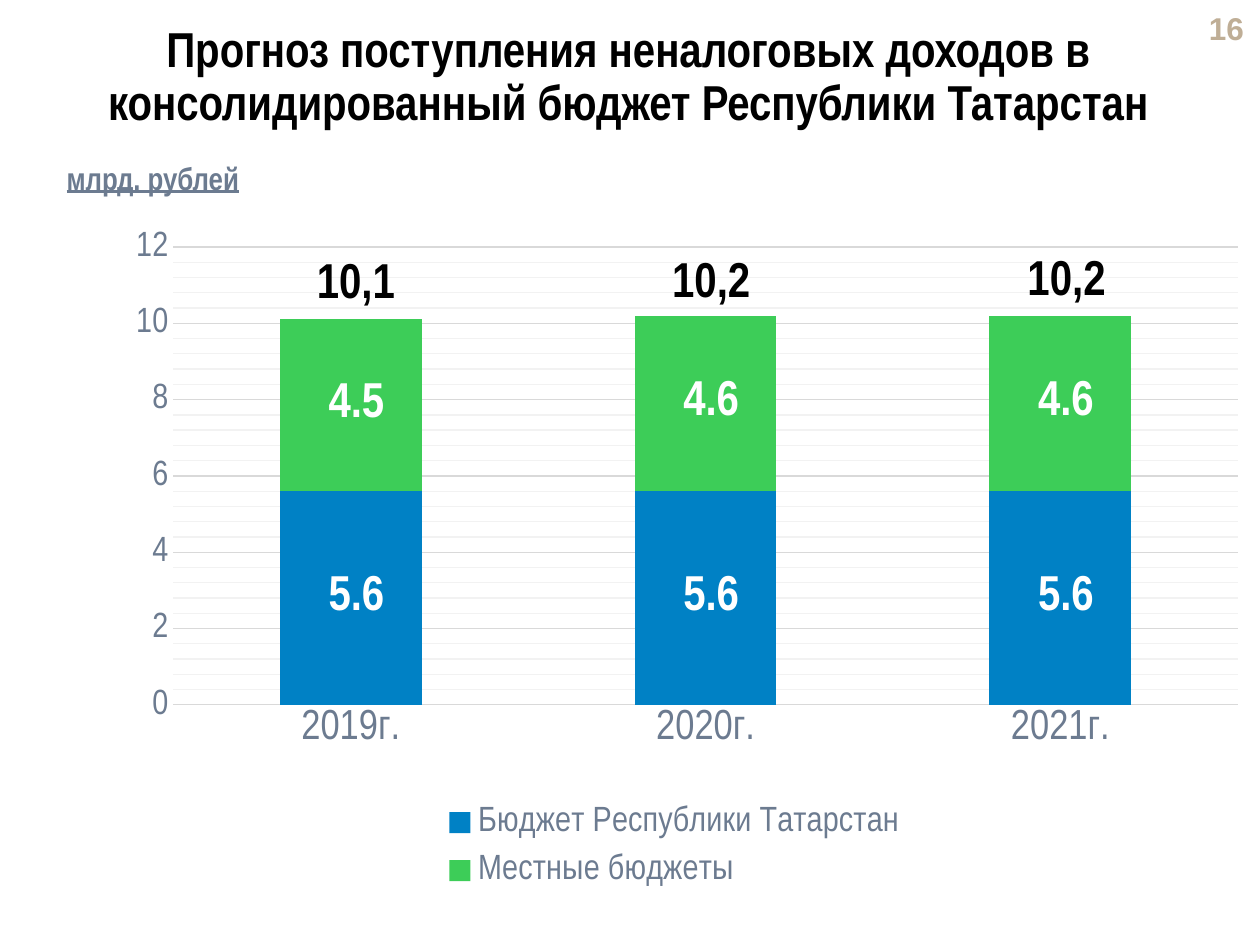
from dataclasses import dataclass

from lxml.etree import SubElement
from pptx import Presentation
from pptx.chart.chart import Chart
from pptx.chart.data import CategoryChartData
from pptx.dml.color import RGBColor
from pptx.enum.chart import XL_CHART_TYPE, XL_LABEL_POSITION, XL_LEGEND_POSITION, XL_TICK_MARK
from pptx.enum.text import MSO_ANCHOR, MSO_AUTO_SIZE, PP_ALIGN
from pptx.oxml.ns import qn
from pptx.slide import Slide
from pptx.util import Inches, Pt

WIDTH, HEIGHT = Inches(10), Inches(7.5)
COLUMNS, ROWS = 1000, 750


@dataclass(frozen=True)
class Theme:
    ink: str = "000000"
    muted: str = "6C7B90"
    page: str = "BFAE96"
    white: str = "FFFFFF"
    republic: str = "0081C5"
    local: str = "3DCD58"
    grid: str = "D9D9D9"
    fine_grid: str = "F2F2F2"
    narrow: str = "Arial Narrow"
    wide: str = "Arial"
    large: int = 28
    category: int = 24
    scale: int = 20
    small: int = 18
    hairline: float = 0.75


THEME = Theme()


@dataclass(frozen=True)
class Area:
    column: float
    row: float
    columns: float
    rows: float

    def lengths(self) -> tuple[int, int, int, int]:
        return (
            int(WIDTH * self.column / COLUMNS),
            int(HEIGHT * self.row / ROWS),
            int(WIDTH * self.columns / COLUMNS),
            int(HEIGHT * self.rows / ROWS),
        )


@dataclass(frozen=True)
class Caption:
    area: Area
    words: str
    size: int = THEME.large
    color: str = THEME.ink
    face: str = THEME.narrow
    align: PP_ALIGN = PP_ALIGN.CENTER
    anchor: MSO_ANCHOR = MSO_ANCHOR.TOP
    underline: bool = False
    line_spacing: float = 1.0
    grows: bool = True


@dataclass(frozen=True)
class Budget:
    name: str
    amounts: tuple[float, ...]
    color: str


YEARS = ("2019г.", "2020г.", "2021г.")
TOTALS = ("10,1", "10,2", "10,2")
BUDGETS = (
    Budget("Бюджет Республики Татарстан", (5.6, 5.6, 5.6), THEME.republic),
    Budget("Местные бюджеты", (4.5, 4.6, 4.6), THEME.local),
)
HEADINGS = (
    Caption(Area(933, 5, 64, 34), "16", THEME.small, THEME.page, THEME.wide,
            PP_ALIGN.RIGHT, MSO_ANCHOR.MIDDLE, grows=False),
    Caption(Area(56, 15, 885, 76),
            "Прогноз поступления неналоговых доходов в "
            "консолидированный бюджет Республики Татарстан",
            line_spacing=0.9, grows=False),
    Caption(Area(43, 121, 189, 40), "млрд. рублей", THEME.small, THEME.muted,
            align=PP_ALIGN.LEFT, underline=True),
)


def style_font(font, size: int, color: str, face: str = THEME.narrow, bold: bool = False) -> None:
    font.size = Pt(size)
    font.bold = bold
    font.name = face
    font.color.rgb = RGBColor.from_string(color)


def style_line(line, color: str) -> None:
    line.color.rgb = RGBColor.from_string(color)
    line.width = Pt(THEME.hairline)


def style_fine_grid(chart: Chart) -> None:
    for gridlines in chart.element.iter(qn("c:minorGridlines")):
        line = SubElement(SubElement(gridlines, qn("c:spPr")), qn("a:ln"))
        line.set("w", str(Pt(THEME.hairline)))
        fill = SubElement(line, qn("a:solidFill"))
        SubElement(fill, qn("a:srgbClr")).set("val", THEME.fine_grid)


def draw_caption(slide: Slide, caption: Caption) -> None:
    frame = slide.shapes.add_textbox(*caption.area.lengths()).text_frame
    frame.word_wrap = True
    frame.auto_size = MSO_AUTO_SIZE.SHAPE_TO_FIT_TEXT if caption.grows else MSO_AUTO_SIZE.NONE
    frame.vertical_anchor = caption.anchor
    paragraph = frame.paragraphs[0]
    paragraph.alignment = caption.align
    paragraph.line_spacing = caption.line_spacing
    run = paragraph.add_run()
    run.text = caption.words
    style_font(run.font, caption.size, caption.color, caption.face, bold=True)
    run.font.underline = caption.underline


def place_part(part, index: int, shares: tuple[float, ...], inner: bool = False) -> None:
    for former in part.findall(qn("c:layout")):
        part.remove(former)
    layout = SubElement(part, qn("c:layout"))
    part.insert(index, layout)
    manual = SubElement(layout, qn("c:manualLayout"))
    settings = [("layoutTarget", "inner")] if inner else []
    settings += [("xMode", "edge"), ("yMode", "edge"), *zip("xywh", shares)]
    for tag, value in settings:
        SubElement(manual, qn(f"c:{tag}")).set("val", str(value))


def style_axes(chart: Chart) -> None:
    years, amounts = chart.category_axis, chart.value_axis
    for axis, size in ((years, THEME.category), (amounts, THEME.scale)):
        axis.major_tick_mark = axis.minor_tick_mark = XL_TICK_MARK.NONE
        style_font(axis.tick_labels.font, size, THEME.muted)
    style_line(years.format.line, THEME.grid)
    amounts.format.line.fill.background()
    amounts.minimum_scale, amounts.maximum_scale = 0, 12
    amounts.major_unit, amounts.minor_unit = 2, 0.4
    amounts.tick_labels.number_format = "0"
    amounts.tick_labels.number_format_is_linked = False
    amounts.has_major_gridlines = amounts.has_minor_gridlines = True
    style_line(amounts.major_gridlines.format.line, THEME.grid)
    style_fine_grid(chart)


def draw_budgets(slide: Slide, area: Area) -> None:
    revenue = CategoryChartData()
    revenue.categories = YEARS
    for budget in BUDGETS:
        revenue.add_series(budget.name, budget.amounts)
    chart = slide.shapes.add_chart(XL_CHART_TYPE.COLUMN_STACKED, *area.lengths(), revenue).chart
    chart.has_title = False
    style_font(chart.font, THEME.scale, THEME.muted)
    style_axes(chart)

    plot = chart.plots[0]
    plot.gap_width, plot.overlap, plot.vary_by_categories = 150, 100, False
    for series, budget in zip(plot.series, BUDGETS):
        series.format.fill.solid()
        series.format.fill.fore_color.rgb = RGBColor.from_string(budget.color)
        labels = series.data_labels
        labels.show_value = True
        labels.position = XL_LABEL_POSITION.CENTER
        labels.number_format = r"#\ ##0.0"
        labels.number_format_is_linked = False
        style_font(labels.font, THEME.large, THEME.white, bold=True)

    chart.has_legend = True
    legend = chart.legend
    legend.position = XL_LEGEND_POSITION.BOTTOM
    legend.include_in_layout = False
    style_font(legend.font, THEME.scale, THEME.muted)
    chart_part = chart.element.find(qn("c:chart"))
    place_part(chart_part.find(qn("c:plotArea")), 0, (0.1, 0.035, 0.892, 0.668), inner=True)
    place_part(chart_part.find(qn("c:legend")), 1, (0.32, 0.83, 0.4, 0.16))


def main() -> None:
    deck = Presentation()
    deck.slide_width, deck.slide_height = WIDTH, HEIGHT
    slide = deck.slides.add_slide(deck.slide_layouts[6])
    draw_budgets(slide, Area(43, 177, 947, 544))
    totals = (
        Caption(Area(231 + 282 * year, 193 - year, 103, 57), total)
        for year, total in enumerate(TOTALS)
    )
    for caption in (*HEADINGS, *totals):
        draw_caption(slide, caption)
    deck.save("out.pptx")


if __name__ == "__main__":
    main()
